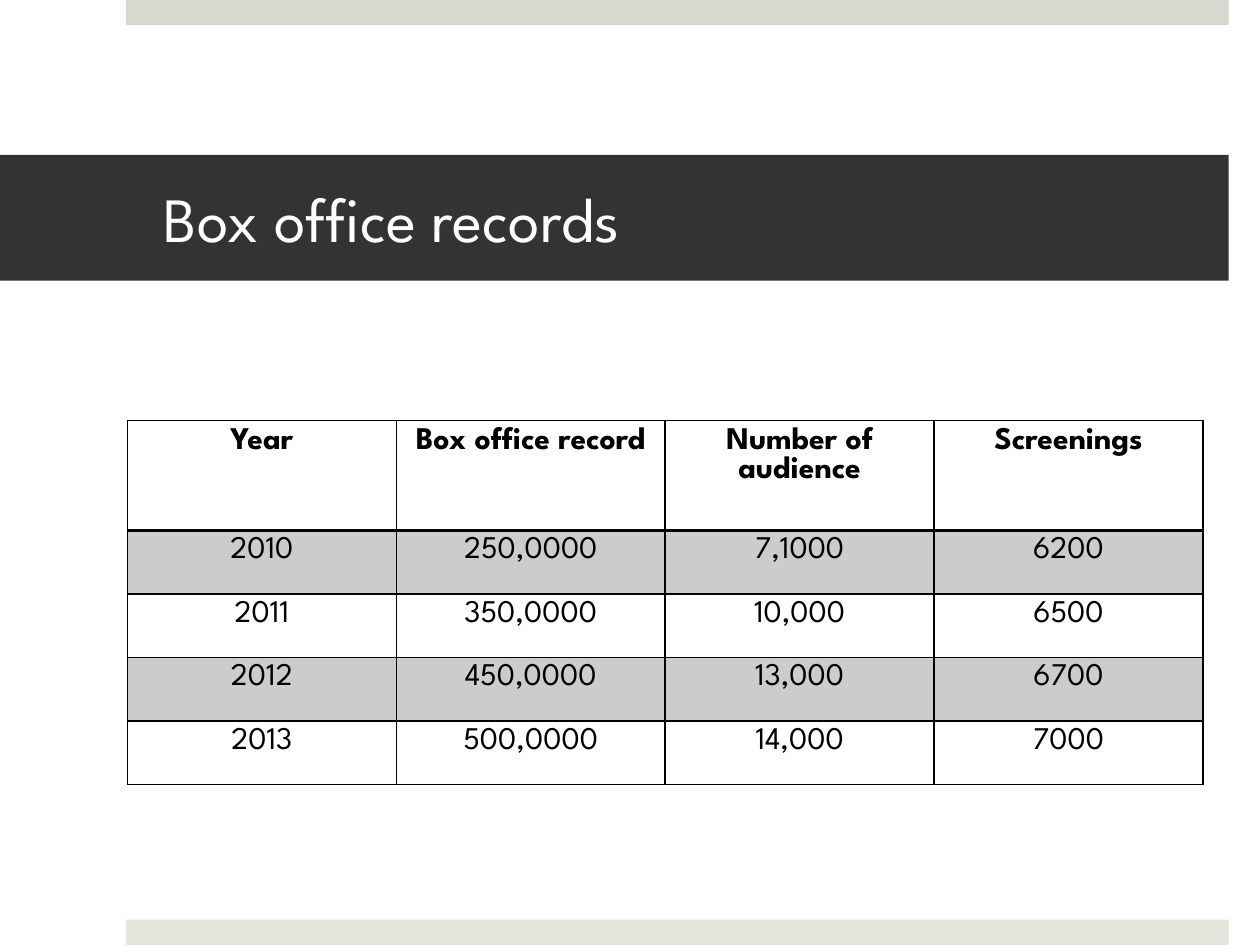
from dataclasses import dataclass

from lxml.etree import SubElement
from pptx import Presentation
from pptx.dml.color import RGBColor
from pptx.enum.shapes import MSO_SHAPE as Preset
from pptx.enum.text import MSO_ANCHOR as Anchor, MSO_AUTO_SIZE as AutoSize, PP_ALIGN as Align
from pptx.oxml import parse_xml
from pptx.oxml.ns import nsdecls, qn
from pptx.slide import Slide
from pptx.table import _Cell as Cell
from pptx.util import Cm, Length, Pt

BLACK = RGBColor(0x00, 0x00, 0x00)
WHITE = RGBColor(0xFF, 0xFF, 0xFF)
CHARCOAL = RGBColor(0x33, 0x33, 0x33)
SAGE = RGBColor(0xD6, 0xD9, 0xCD)
PALE_SAGE = RGBColor(0xE4, 0xE6, 0xDE)
FONT = "League Spartan"
BAND_OPACITY = 20

SLIDE_WIDTH, SLIDE_HEIGHT = Cm(25.4), Cm(19.05)
STRIP_HEIGHT = Cm(0.51)
RIGHT_EDGE = Cm(24.77)
HEADER_HEIGHT, ROW_HEIGHT, COLUMN_WIDTH = Cm(2.21), Cm(1.28), Cm(5.42)

RECORDS = [
    ("Year", "Box office record", "Number of audience", "Screenings"),
    ("2010", "250,0000", "7,1000", "6200"),
    ("2011", "350,0000", "10,000", "6500"),
    ("2012", "450,0000", "13,000", "6700"),
    ("2013", "500,0000", "14,000", "7000"),
]


@dataclass
class Strip:
    top: Length
    color: RGBColor


STRIPS = [
    Strip(Cm(0), SAGE),
    Strip(Length(SLIDE_HEIGHT - STRIP_HEIGHT), PALE_SAGE),
]


def apply(target: object, values: dict) -> None:
    for name, value in values.items():
        setattr(target, name, value)


def draw_strip(slide: Slide, strip: Strip) -> None:
    left = Cm(2.54)
    bar = slide.shapes.add_shape(
        Preset.RECTANGLE, left, strip.top, RIGHT_EDGE - left, STRIP_HEIGHT
    )
    bar.shadow.inherit = False
    bar.fill.solid()
    bar.fill.fore_color.rgb = strip.color
    bar.line.fill.background()


def draw_title(slide: Slide, text: str) -> None:
    title = slide.shapes.title
    apply(title, {"left": Cm(0), "top": Cm(3.12), "width": RIGHT_EDGE, "height": Cm(2.54)})
    title.fill.solid()
    title.fill.fore_color.rgb = CHARCOAL
    frame = title.text_frame
    frame.text = text
    apply(frame, {
        "margin_left": Cm(3.3), "margin_right": Cm(0.76),
        "margin_top": Cm(0.13), "margin_bottom": Cm(0.13),
        "vertical_anchor": Anchor.MIDDLE, "auto_size": AutoSize.NONE, "word_wrap": True,
    })
    line = frame.paragraphs[0]
    line.alignment = Align.LEFT
    apply(line.runs[0].font, {"name": FONT, "size": Pt(36)})
    line.runs[0].font.color.rgb = WHITE


def set_borders(cell: Cell, points: dict[str, int]) -> None:
    """Put the side lines ahead of the fill, as the schema requires."""
    properties = cell._tc.get_or_add_tcPr()
    for index, (side, width) in enumerate(points.items()):
        properties.insert(index, parse_xml(
            f'<a:ln{side} {nsdecls("a")} w="{Pt(width)}"><a:solidFill>'
            f'<a:srgbClr val="{BLACK}"/></a:solidFill></a:ln{side}>'
        ))


def fill_band(cell: Cell) -> None:
    cell.fill.solid()
    cell.fill.fore_color.rgb = BLACK
    color = cell._tc.tcPr.find(f".//{qn('a:srgbClr')}")
    SubElement(color, qn("a:alpha"), val=str(BAND_OPACITY * 1000))


def draw_cell(cell: Cell, text: str, row: int) -> None:
    cell.text = text
    line = cell.text_frame.paragraphs[0]
    line.alignment = Align.CENTER
    font = line.runs[0].font
    apply(font, {"name": FONT, "size": Pt(18), "bold": row == 0})
    font.color.rgb = BLACK
    if row % 2:
        fill_band(cell)
    else:
        cell.fill.background()
    set_borders(cell, {
        "L": 1, "R": 1, "T": 2 if row == 1 else 1, "B": 2 if row == 0 else 1,
    })


def draw_records(slide: Slide) -> None:
    row_count, column_count = len(RECORDS), len(RECORDS[0])
    table = slide.shapes.add_table(
        row_count, column_count, Cm(2.57), Cm(8.48),
        COLUMN_WIDTH * column_count, HEADER_HEIGHT + ROW_HEIGHT * (row_count - 1),
    ).table
    apply(table, {"first_row": False, "horz_banding": False})
    for column in table.columns:
        column.width = COLUMN_WIDTH
    for row, record in enumerate(RECORDS):
        table.rows[row].height = ROW_HEIGHT if row else HEADER_HEIGHT
        for column, text in enumerate(record):
            draw_cell(table.cell(row, column), text, row)


def main() -> None:
    deck = Presentation()
    apply(deck, {"slide_width": SLIDE_WIDTH, "slide_height": SLIDE_HEIGHT})
    slide = deck.slides.add_slide(deck.slide_layouts.get_by_name("Title Only"))
    for strip in STRIPS:
        draw_strip(slide, strip)
    draw_title(slide, "Box office records")
    draw_records(slide)
    deck.save("out.pptx")


if __name__ == "__main__":
    main()
